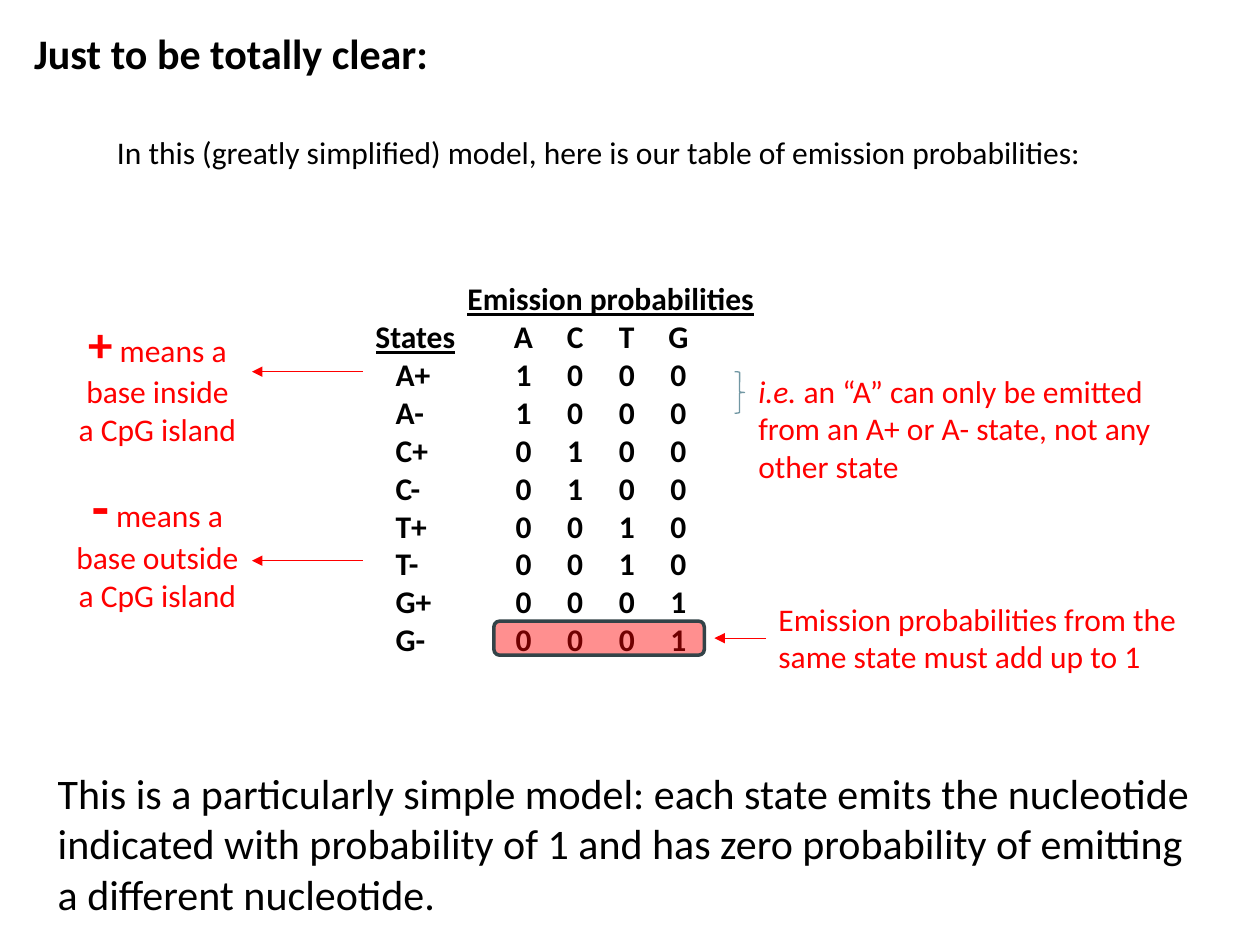
import lxml.etree
import pptx
import pptx.util
import pptx.dml.color
import pptx.enum.shapes
import pptx.enum.text
import pptx.oxml.ns

Inches = pptx.util.Inches
ALIGN = pptx.enum.text.PP_ALIGN
ANCHOR = pptx.enum.text.MSO_ANCHOR
SHAPE = pptx.enum.shapes.MSO_SHAPE
BLACK, RED = "000000", "FF0000"
BASES = "ACTG"


def rgb(color):
    return pptx.dml.color.RGBColor.from_string(color)


def add_child(parent, tag, **attrs):
    return lxml.etree.SubElement(parent, pptx.oxml.ns.qn(tag), attrs)


def add_run(p, text, size=18, color=BLACK, **fmt):
    r = p.add_run()
    r.text = text
    r.font.color.rgb = rgb(color)
    for name, value in {"name": "Calibri", "size": pptx.util.Pt(size), **fmt}.items():
        setattr(r.font, name, value)


def add_text(slide, box, runs, align=ALIGN.LEFT, wrap=True):
    sp = slide.shapes.add_textbox(*map(Inches, box))
    tf = sp.text_frame
    tf.word_wrap = wrap
    tf.auto_size = pptx.enum.text.MSO_AUTO_SIZE.SHAPE_TO_FIT_TEXT
    p = tf.paragraphs[0]
    p.alignment = align
    for text, fmt in runs:
        add_run(p, text, **fmt)
    return sp


def add_arrow(slide, x1, x2, y, source=None):
    cx = slide.shapes.add_connector(
        pptx.enum.shapes.MSO_CONNECTOR.STRAIGHT, *map(Inches, (x1, y, x2, y)))
    if source is not None:
        cx.begin_connect(source, 1)
    cx.line.color.rgb = rgb(RED)
    cx.line.width = pptx.util.Pt(0.75)
    ln = cx._element.spPr.find(pptx.oxml.ns.qn("a:ln"))
    add_child(ln, "a:tailEnd", type="triangle")
    add_child(cx._element.spPr, "a:effectLst")


def add_outline(slide, kind, box, color, width):
    sp = slide.shapes.add_shape(kind, *map(Inches, box))
    sp.shadow.inherit = False
    sp.fill.background()
    sp.line.color.rgb = rgb(color)
    sp.line.width = pptx.util.Pt(width)
    return sp


def add_title(slide, box, text):
    sp = slide.shapes.title
    sp.left, sp.top, sp.width, sp.height = map(Inches, box)
    tf = sp.text_frame
    tf.vertical_anchor = ANCHOR.TOP
    p = tf.paragraphs[0]
    p.alignment = ALIGN.LEFT
    add_run(p, text, size=24, bold=True)


def fill_cell(cell, text, align=ALIGN.LEFT, indent=0, underline=False):
    fmt = {"margin_left": Inches(indent), "margin_right": 0,
           "vertical_anchor": ANCHOR.MIDDLE}
    for name, value in fmt.items():
        setattr(cell, name, value)
    p = cell.text_frame.paragraphs[0]
    p.alignment = align
    add_run(p, text, bold=True, underline=underline)


def add_emissions(slide, box):
    states = [base + sign for base in BASES for sign in "+-"]
    widths = [0.97] + [0.41] * len(BASES) + [0.5]
    rows = len(states) + 2
    table = slide.shapes.add_table(rows, len(widths), *map(Inches, box)).table
    table.first_row = table.horz_banding = False
    for column, width in zip(table.columns, widths):
        column.width = Inches(width)
    for row in table.rows:
        row.height = Inches(box[3] / rows)
    for cell in table.iter_cells():
        cell.fill.background()
        cell.margin_top = cell.margin_bottom = 0
    table.cell(0, 0).merge(table.cell(0, len(widths) - 1))
    fill_cell(table.cell(0, 0), "Emission probabilities", indent=0.73, underline=True)
    fill_cell(table.cell(1, 0), "States", underline=True)
    for j, base in enumerate(BASES, 1):
        fill_cell(table.cell(1, j), base, ALIGN.CENTER)
    for i, state in enumerate(states, 2):
        fill_cell(table.cell(i, 0), state, indent=0.16)
        for j, base in enumerate(BASES, 1):
            fill_cell(table.cell(i, j), str(int(state[0] == base)), ALIGN.CENTER)


def add_sign_note(slide, box, sign, size, place, arrow_y):
    add_text(slide, box, [
        (sign, {"size": size, "color": RED, "bold": True}),
        (f" means a base {place} a CpG island", {"color": RED}),
    ], ALIGN.CENTER)
    add_arrow(slide, 2.88, 2, arrow_y)


def add_state_note(slide, box):
    x, y = box[:2]
    add_outline(slide, SHAPE.RIGHT_BRACE, (x - 0.09, y + 0.05, 0.08, 0.33), "7197A3", 0.75)
    add_text(slide, box, [
        ("i.e. ", {"color": RED, "italic": True}),
        ("an “A” can only be emitted from an A+ or A- state, not any other state",
         {"color": RED}),
    ])


def add_sum_note(slide, box):
    sp = add_outline(slide, SHAPE.ROUNDED_RECTANGLE, (3.92, 4.93, 1.67, 0.27), "334348", 2)
    sp.fill.solid()
    sp.fill.fore_color.rgb = rgb(RED)
    srgb = sp._element.spPr.find(".//" + pptx.oxml.ns.qn("a:srgbClr"))
    add_child(srgb, "a:alpha", val="44000")
    note = add_text(slide, box, [
        ("Emission probabilities from the same state must add up to 1", {"color": RED})])
    add_arrow(slide, box[0], 5.67, box[1] + box[3] / 2, note)


def main():
    prs = pptx.Presentation()
    prs.slide_width, prs.slide_height = Inches(10), Inches(7.5)
    slide = prs.slides.add_slide(prs.slide_layouts.get_by_name("Title Only"))
    add_title(slide, (0.17, 0.17, 9.67, 0.91), "Just to be totally clear:")
    add_text(slide, (0.83, 1.01, 7.88, 0.4), [
        ("In this (greatly simplified) model, here is our table of emission probabilities:", {}),
    ], wrap=False)
    add_emissions(slide, (2.98, 2.23, 3.11, 3))
    add_sign_note(slide, (0.5, 2.44, 1.5, 1.18), "+", 28, "inside", 2.95)
    add_sign_note(slide, (0.5, 3.69, 1.5, 1.25), "-", 32, "outside", 4.45)
    add_state_note(slide, (5.92, 2.9, 3.5, 1.01))
    add_sum_note(slide, (6.08, 4.71, 3.5, 0.71))
    add_text(slide, (0.36, 6.04, 9.33, 1.31), [
        ("This is a particularly simple model: each state emits the nucleotide indicated "
         "with probability of 1 and has zero probability of emitting a different nucleotide.",
         {"size": 24}),
    ])
    prs.save("out.pptx")


if __name__ == "__main__":
    main()
